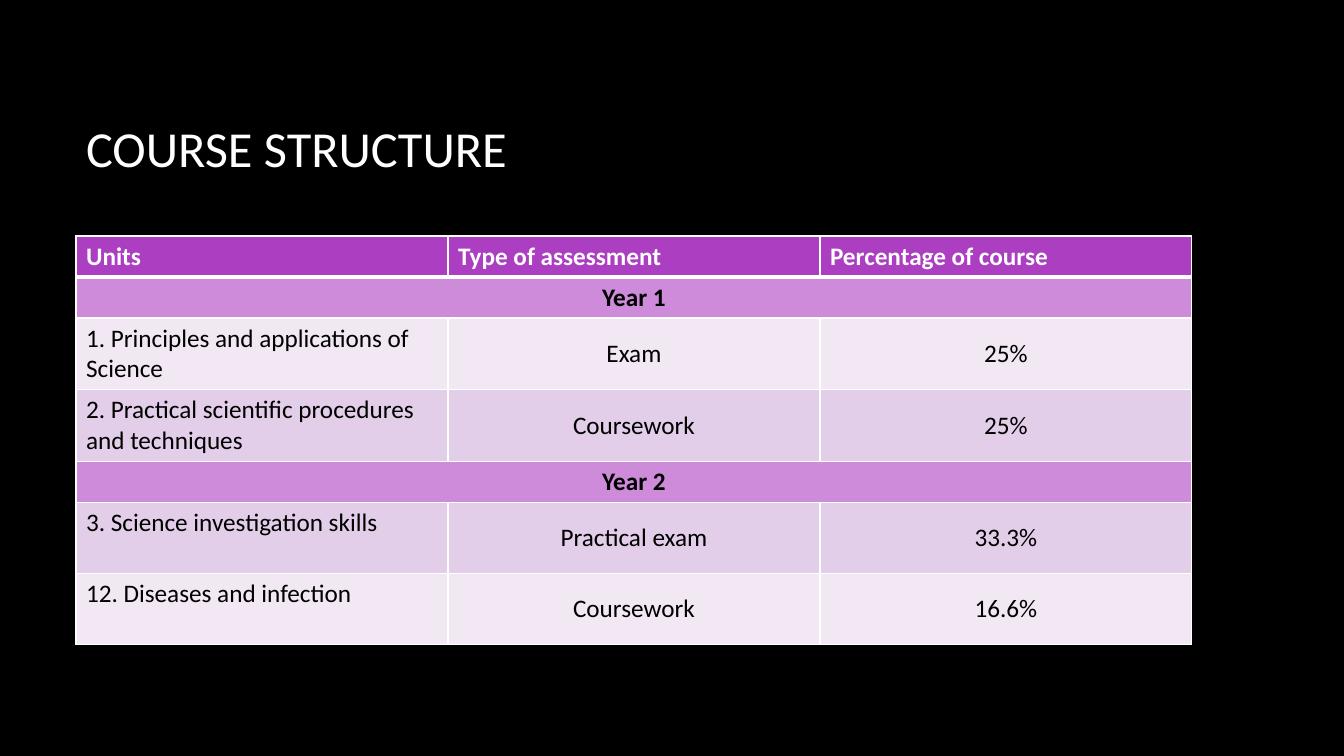
import pptx
import pptx.util
import pptx.dml.color
import pptx.enum.text
import pptx.oxml
import pptx.oxml.ns

# Content
HEADING = "COURSE STRUCTURE"
HEADERS = ("Units", "Type of assessment", "Percentage of course")
PALE, MID = "F1E8F4", "E3CEE9"
YEARS = [
    ("Year 1", [
        (PALE, ("1. Principles and applications of Science", "Exam", "25%")),
        (MID, ("2. Practical scientific procedures and techniques", "Coursework", "25%")),
    ]),
    ("Year 2", [
        (MID, ("3. Science investigation skills", "Practical exam", "33.3%")),
        (PALE, ("12. Diseases and infection", "Coursework", "16.6%")),
    ]),
]
HEADER_FILL, YEAR_FILL = "AC3EC1", "CD8BDA"
WHITE, BLACK = "FFFFFF", "000000"
FONT = "Calibri"

# Layout in px
SLIDE_W, SLIDE_H = 1344, 756
LEFT, WIDTH = 76, 1116
TITLE_TOP, TITLE_H = 67, 160
TABLE_TOP, BAND_H, UNIT_H = 236, 41, 71

ALIGN = pptx.enum.text.PP_ALIGN
ANCHOR = pptx.enum.text.MSO_ANCHOR


def px(length):
    return pptx.util.Emu(round(length * 914400 / 100.8))


def colour(code):
    return pptx.dml.color.RGBColor.from_string(code)


def write(frame, text, size, ink, bold=False, align=ALIGN.LEFT):
    frame.text = text
    paragraph = frame.paragraphs[0]
    paragraph.alignment = align
    for run in paragraph.runs:
        run.font.name = FONT
        run.font.size = pptx.util.Pt(size)
        run.font.bold = bold
        run.font.color.rgb = colour(ink)


def set_borders(cell, top=1, bottom=1):
    sides = (("L", 1), ("R", 1), ("T", top), ("B", bottom))
    for position, (side, points) in enumerate(sides):
        line = pptx.oxml.parse_xml(
            f'<a:ln{side} {pptx.oxml.ns.nsdecls("a")} w="{pptx.util.Pt(points)}">'
            f'<a:solidFill><a:srgbClr val="{WHITE}"/></a:solidFill></a:ln{side}>')
        cell._tc.get_or_add_tcPr().insert(position, line)


# Slide and title
deck = pptx.Presentation()
deck.slide_width, deck.slide_height = px(SLIDE_W), px(SLIDE_H)
slide = deck.slides.add_slide(deck.slide_layouts[5])
slide.background.fill.solid()
slide.background.fill.fore_color.rgb = colour(BLACK)

title = slide.shapes.title
title.left, title.top, title.width, title.height = map(
    px, (LEFT, TITLE_TOP, WIDTH, TITLE_H))
write(title.text_frame, HEADING, 36, WHITE)
title.text_frame.vertical_anchor = ANCHOR.MIDDLE

# Table rows: height, fill, text colour, bold, texts
rows = [(BAND_H, HEADER_FILL, WHITE, True, HEADERS)]
for year, units in YEARS:
    rows.append((BAND_H, YEAR_FILL, BLACK, True, (year,)))
    rows += [(UNIT_H, fill, BLACK, False, texts) for fill, texts in units]

# Table
columns = len(HEADERS)
table = slide.shapes.add_table(
    len(rows), columns, px(LEFT), px(TABLE_TOP), px(WIDTH),
    px(sum(row[0] for row in rows))).table
for column in table.columns:
    column.width = px(WIDTH / columns)

for r, (height, fill, ink, bold, texts) in enumerate(rows):
    table.rows[r].height = px(height)
    is_year = len(texts) == 1
    for c in range(columns):
        cell = table.cell(r, c)
        cell.fill.solid()
        cell.fill.fore_color.rgb = colour(fill)
        set_borders(cell, top=3 if r == 1 else 1, bottom=3 if r == 0 else 1)
    if is_year:
        table.cell(r, 0).merge(table.cell(r, columns - 1))
    for c, text in enumerate(texts):
        centred = is_year or (r > 0 and c > 0)
        cell = table.cell(r, c)
        write(cell.text_frame, text, 18, ink, bold,
              ALIGN.CENTER if centred else ALIGN.LEFT)
        if centred and not is_year:
            cell.vertical_anchor = ANCHOR.MIDDLE

deck.save("out.pptx")
